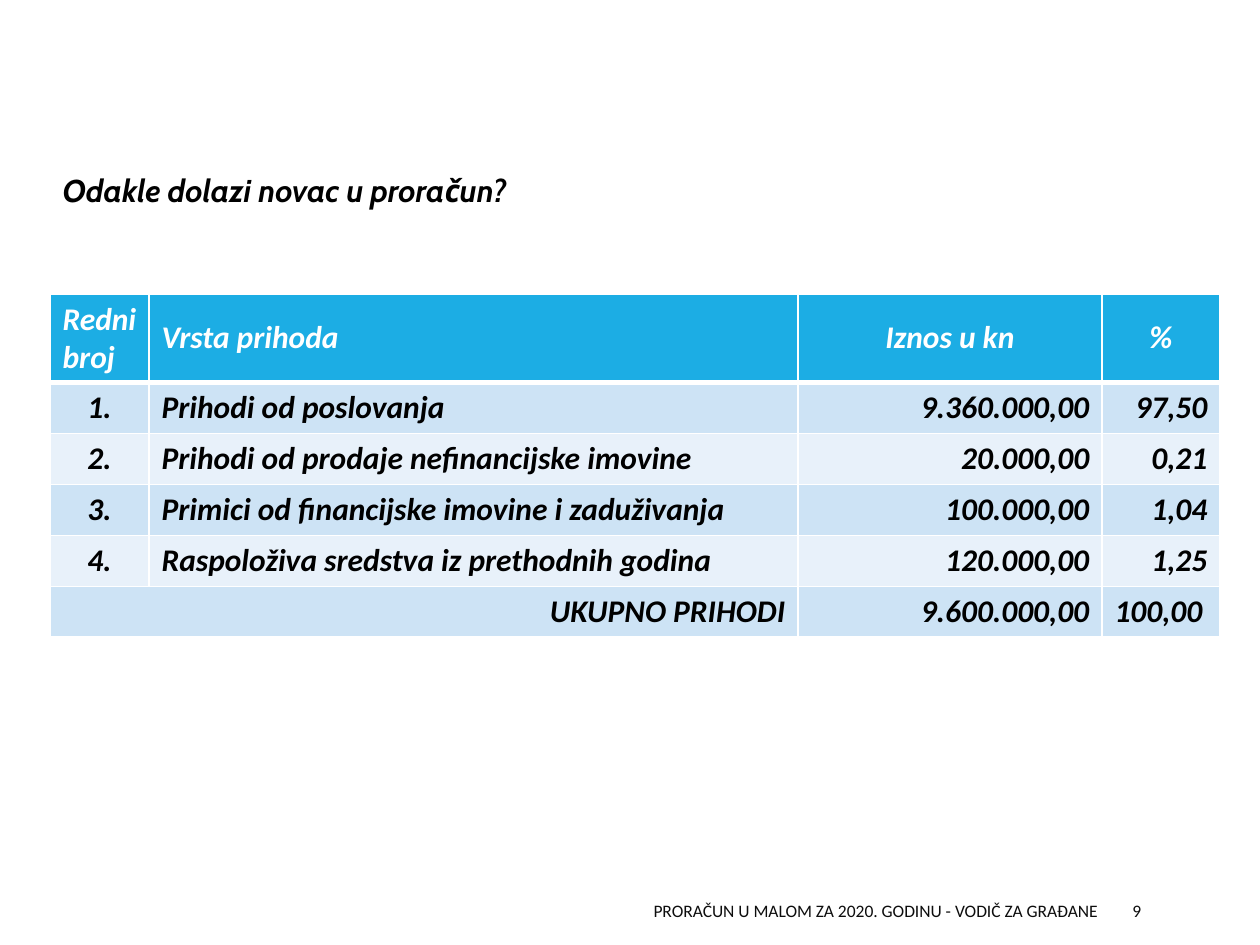
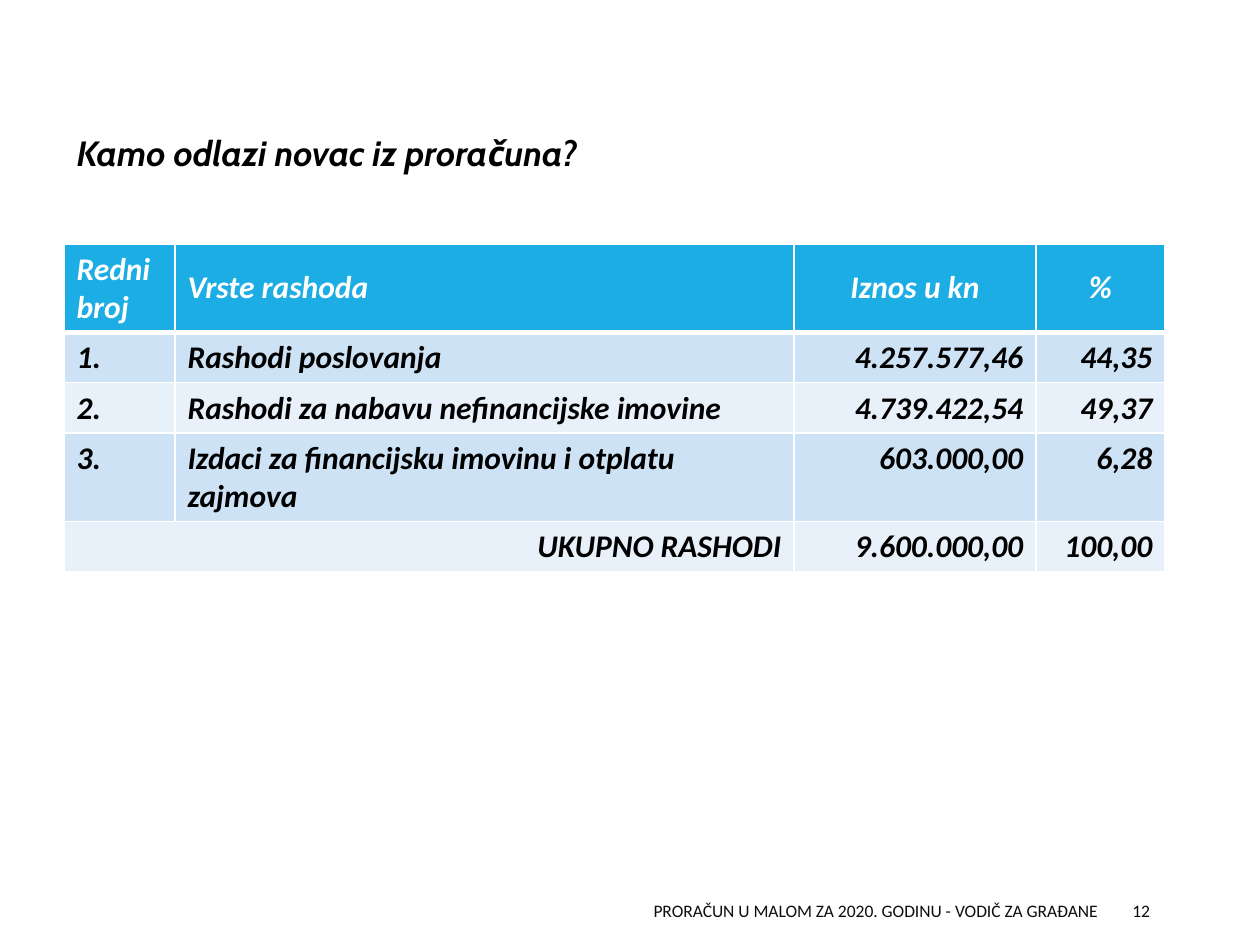
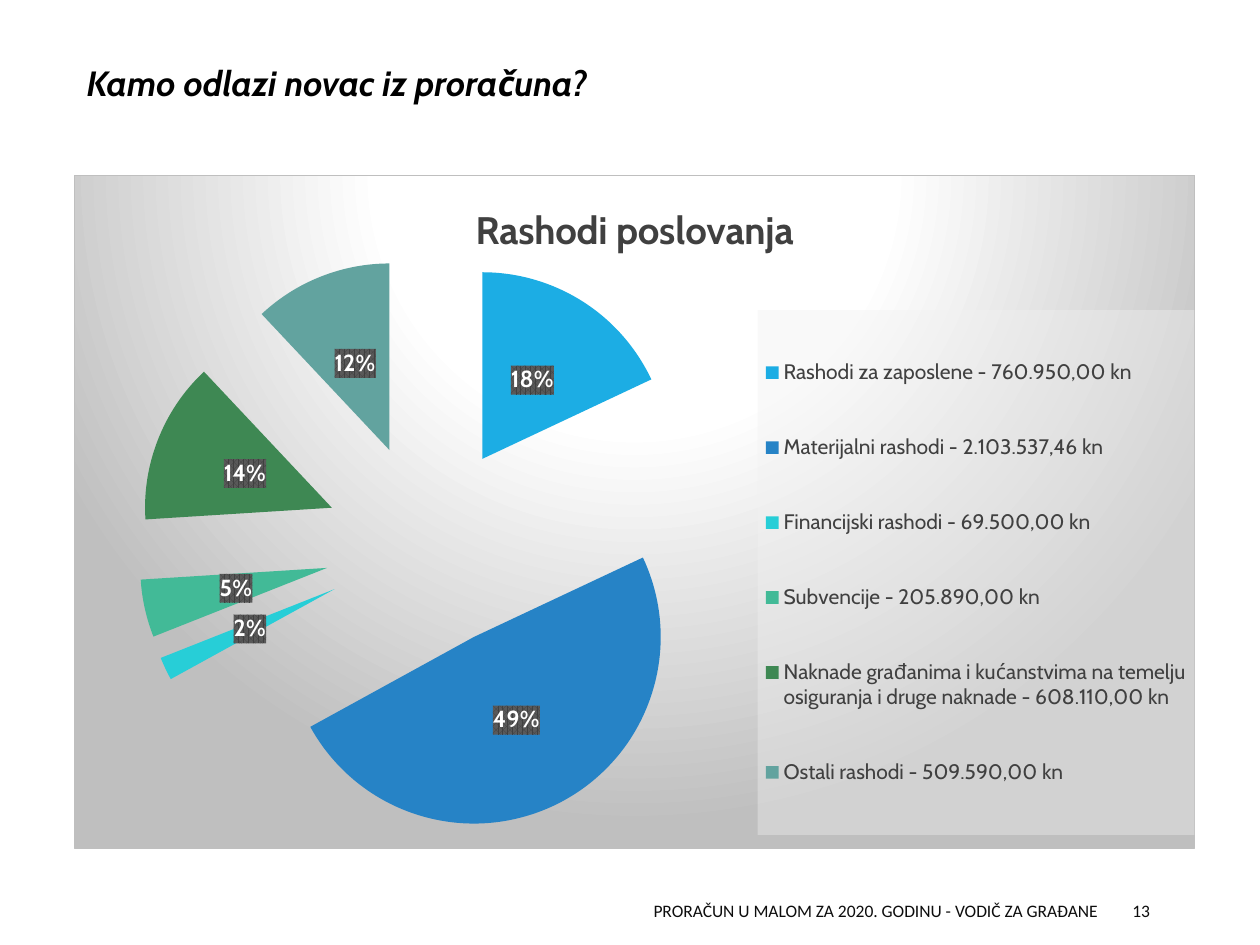
from lxml import etree
from pptx import Presentation
from pptx.chart.data import CategoryChartData
from pptx.dml.color import RGBColor
from pptx.enum.chart import XL_CHART_TYPE as ChartType, XL_LABEL_POSITION as LabelPos, XL_LEGEND_POSITION as LegendPos
from pptx.enum.text import MSO_ANCHOR as Anchor, PP_ALIGN as Align
from pptx.oxml import parse_xml
from pptx.oxml.ns import qn
from pptx.util import Emu, Pt

COLORS = {
    "header": "1CADE4", "band": "CDE3F5", "light": "E8F1FA", "white": "FFFFFF",
    "black": "000000", "footer": "0D0D0D", "chart_text": "404040", "edge": "BFBFBF",
    "label_back": "595959", "legend": "F2F2F2",
}
NAMESPACES = ('xmlns:a="http://schemas.openxmlformats.org/drawingml/2006/main" '
              'xmlns:c="http://schemas.openxmlformats.org/drawingml/2006/chart"')
FOOTER = "PRORAČUN U MALOM ZA 2020. GODINU - VODIČ ZA GRAĐANE"
FOOTER_BOX = (500, 892, 610, 38)
NUMBER_BOX = (1120, 892, 101, 38)
L, C, R = Align.LEFT, Align.CENTER, Align.RIGHT
HEADER_ALIGNS = (L, L, C, C)

INCOME = {
    "title": "Odakle dolazi novac u proračun?", "title_box": (50, 165, 546, 50),
    "title_size": 18, "number": "9",
    "origin": (50, 294), "columns": (99, 649, 304, 118), "heights": (87, 51, 51, 51, 51, 51),
    "aligns": (C, L, R, R), "total_aligns": (R, R, R, L),
    "rows": [
        ("Redni broj", "Vrsta prihoda", "Iznos u kn", "%"),
        ("1.", "Prihodi od poslovanja", "9.360.000,00", "97,50"),
        ("2.", "Prihodi od prodaje nefinancijske imovine", "20.000,00", "0,21"),
        ("3.", "Primici od financijske imovine i zaduživanja", "100.000,00", "1,04"),
        ("4.", "Raspoloživa sredstva iz prethodnih godina", "120.000,00", "1,25"),
        ("UKUPNO PRIHODI", "", "9.600.000,00", "100,00"),
    ],
}
EXPENSES = {
    "title": "Kamo odlazi novac iz proračuna?", "title_box": (64, 125, 595, 55),
    "title_size": 20, "number": "12",
    "origin": (64, 244), "columns": (111, 619, 242, 129), "heights": (87, 50, 50, 88, 50),
    "aligns": (L, L, R, R), "total_aligns": (R, R, R, R),
    "rows": [
        ("Redni broj", "Vrste rashoda", "Iznos u kn", "%"),
        ("1.", "Rashodi poslovanja", "4.257.577,46", "44,35"),
        ("2.", "Rashodi za nabavu nefinancijske imovine", "4.739.422,54", "49,37"),
        ("3.", "Izdaci za financijsku imovinu i otplatu zajmova", "603.000,00", "6,28"),
        ("UKUPNO RASHODI", "", "9.600.000,00", "100,00"),
    ],
}
OPERATING = {
    "title": "Kamo odlazi novac iz proračuna?", "title_box": (74, 55, 595, 55),
    "title_size": 20, "number": "13",
    "chart_title": "Rashodi poslovanja", "chart_box": (74, 175, 1121, 674),
    "plot": (0, 0.12, 0.63, 0.86), "legend": (0.61, 0.2, 0.39, 0.78), "explosion": 55,
    "slices": [
        ("Rashodi za zaposlene - 760.950,00 kn", 18, "1CADE4"),
        ("Materijalni rashodi - 2.103.537,46 kn", 49, "2683C6"),
        ("Financijski rashodi - 69.500,00 kn", 2, "27CED7"),
        ("Subvencije - 205.890,00 kn", 5, "42BA97"),
        ("Naknade građanima i kućanstvima na temelju osiguranja i druge naknade - 608.110,00 kn",
         14, "3E8853"),
        ("Ostali rashodi - 509.590,00 kn", 12, "62A39F"),
    ],
}


def px(length):
    return Emu(round(length * 914400 / 126))


def style_font(font, face, size, color, bold=False, italic=False):
    font.name, font.size, font.bold, font.italic = face, Pt(size), bold, italic
    font.color.rgb = RGBColor.from_string(COLORS[color])


def write(frame, text, align, face, size, color, bold=False, italic=False):
    frame.text = text
    paragraph = frame.paragraphs[0]
    paragraph.alignment = align
    for run in paragraph.runs:
        style_font(run.font, face, size, color, bold, italic)


def add_footer_text(slide, box, text, align):
    frame = slide.shapes.add_textbox(*map(px, box)).text_frame
    frame.word_wrap = True
    frame.vertical_anchor = Anchor.MIDDLE
    write(frame, text, align, "Calibri", 10, "footer")


def add_page(deck, page):
    slide = deck.slides.add_slide(deck.slide_layouts[5])
    title = slide.shapes.title
    title.left, title.top, title.width, title.height = map(px, page["title_box"])
    title.text_frame.vertical_anchor = Anchor.TOP
    title.text_frame.word_wrap = True
    write(title.text_frame, page["title"], L, "Cabin", page["title_size"], "black", True, True)
    add_footer_text(slide, FOOTER_BOX, FOOTER, R)
    add_footer_text(slide, NUMBER_BOX, page["number"], L)
    return slide


def add_borders(cell, bottom):
    properties = cell._tc.get_or_add_tcPr()
    for place, side in enumerate("LRTB"):
        width = Pt(bottom if side == "B" else 1)
        properties.insert(place, parse_xml(
            f'<a:ln{side} {NAMESPACES} w="{width}"><a:solidFill>'
            f'<a:srgbClr val="{COLORS["white"]}"/></a:solidFill></a:ln{side}>'))


def add_budget_table(slide, page):
    rows, columns, heights = page["rows"], page["columns"], page["heights"]
    last = len(rows) - 1
    table = slide.shapes.add_table(len(rows), len(columns), *map(px, page["origin"]),
                                   px(sum(columns)), px(sum(heights))).table
    for column, width in zip(table.columns, columns):
        column.width = px(width)
    for row, height in zip(table.rows, heights):
        row.height = px(height)
    table.cell(last, 0).merge(table.cell(last, 1))
    for r, row in enumerate(rows):
        header = r == 0
        fill = "header" if header else "band" if r % 2 else "light"
        aligns = {0: HEADER_ALIGNS, last: page["total_aligns"]}.get(r, page["aligns"])
        for c, text in enumerate(row):
            cell = table.cell(r, c)
            cell.fill.solid()
            cell.fill.fore_color.rgb = RGBColor.from_string(COLORS[fill])
            cell.vertical_anchor = Anchor.MIDDLE if header else Anchor.TOP
            add_borders(cell, 3 if header else 1)
            write(cell.text_frame, text, aligns[c], "Calibri", 18,
                  "white" if header else "black", True, True)


def manual_layout(box, target=""):
    parts = "".join(f'<c:{name} val="{value}"/>' for name, value in zip("xywh", box))
    return parse_xml(f'<c:layout {NAMESPACES}><c:manualLayout>{target}<c:xMode val="edge"/>'
                     f'<c:yMode val="edge"/>{parts}</c:manualLayout></c:layout>')


def shape_properties(content):
    return parse_xml(f'<c:spPr {NAMESPACES}>{content}</c:spPr>')


def color_xml(color, inner=""):
    return f'<a:srgbClr val="{COLORS[color]}">{inner}</a:srgbClr>'


def add_pie(slide, page):
    names, shares, fills = zip(*page["slices"])
    data = CategoryChartData()
    data.categories = names
    data.add_series(page["chart_title"], shares)
    chart = slide.shapes.add_chart(ChartType.PIE, *map(px, page["chart_box"]), data).chart
    style_font(chart.font, "Cabin", 10, "black")
    chart.has_title = True
    write(chart.chart_title.text_frame, page["chart_title"], C, "Cabin", 22, "chart_text", True)
    chart.chart_title.include_in_layout = False

    stops = "".join(f'<a:gs pos="{position}">{color_xml(color)}</a:gs>' for position, color in
                    ((0, "white"), (39000, "white"), (100000, "edge")))
    background = shape_properties(
        f'<a:gradFill><a:gsLst>{stops}</a:gsLst><a:path path="circle">'
        '<a:fillToRect l="50000" t="-80000" r="50000" b="180000"/></a:path></a:gradFill>'
        f'<a:ln w="{Pt(0.75)}"><a:solidFill>{color_xml("edge")}</a:solidFill></a:ln>')
    chart._chartSpace.find(qn("c:chart")).addnext(background)

    plot = chart.plots[0]
    plot.vary_by_categories = True
    area = plot._element.getparent()
    for layout in area.findall(qn("c:layout")):
        area.remove(layout)
    area.insert(0, manual_layout(page["plot"], '<c:layoutTarget val="inner"/>'))

    series = plot.series[0]
    for index, fill in enumerate(fills):
        slice_fill = series.points[index].format.fill
        slice_fill.solid()
        slice_fill.fore_color.rgb = RGBColor.from_string(fill)
    explosion = etree.Element(qn("c:explosion"), val=str(page["explosion"]))
    series._element.find(qn("c:dPt")).addprevious(explosion)

    labels = series.data_labels
    labels.show_percentage = True
    labels.show_value = False
    labels.number_format, labels.number_format_is_linked = "0%", False
    labels.position = LabelPos.CENTER
    style_font(labels.font, "Cabin", 13.3, "white", True)
    labels._element.find(qn("c:numFmt")).addnext(shape_properties(
        f'<a:pattFill prst="pct75"><a:fgClr>{color_xml("chart_text")}</a:fgClr>'
        f'<a:bgClr>{color_xml("label_back")}</a:bgClr></a:pattFill>'))

    chart.has_legend = True
    legend = chart.legend
    legend.position = LegendPos.RIGHT
    legend.include_in_layout = False
    style_font(legend.font, "Cabin", 12, "chart_text")
    for layout in legend._element.findall(qn("c:layout")):
        legend._element.remove(layout)
    legend._element.find(qn("c:legendPos")).addnext(manual_layout(page["legend"]))
    translucent = color_xml("legend", '<a:alpha val="39000"/>')
    legend._element.find(qn("c:overlay")).addnext(
        shape_properties(f'<a:solidFill>{translucent}</a:solidFill>'))


def main():
    deck = Presentation()
    deck.slide_width, deck.slide_height = px(1260), px(945)
    for page in (INCOME, EXPENSES):
        add_budget_table(add_page(deck, page), page)
    add_pie(add_page(deck, OPERATING), OPERATING)
    deck.save("out.pptx")


if __name__ == "__main__":
    main()
